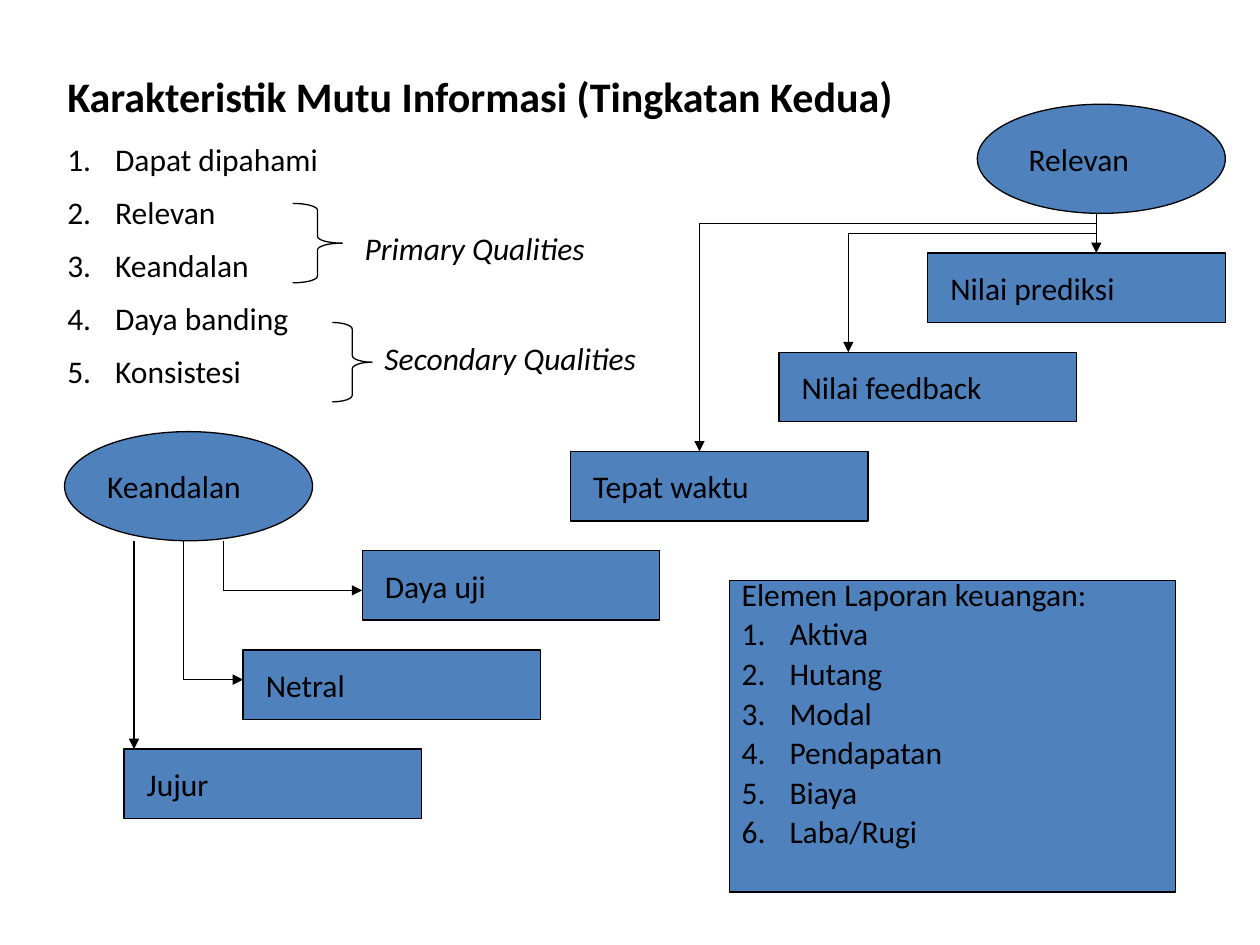
from lxml import etree
from pptx import Presentation
from pptx.dml.color import RGBColor
from pptx.enum.shapes import MSO_CONNECTOR, MSO_SHAPE
from pptx.enum.text import MSO_ANCHOR, MSO_AUTO_SIZE, PP_ALIGN
from pptx.oxml.ns import qn
from pptx.util import Inches, Pt

OVAL, RECT, BRACE = MSO_SHAPE.OVAL, MSO_SHAPE.RECTANGLE, MSO_SHAPE.RIGHT_BRACE
LINE = MSO_CONNECTOR.STRAIGHT
TOP, MIDDLE, LEFT = MSO_ANCHOR.TOP, MSO_ANCHOR.MIDDLE, PP_ALIGN.LEFT
NO_FIT = MSO_AUTO_SIZE.NONE

FONT = "Calibri"
COLORS = {"ink": "000000", "box": "4F81BD"}
CELL, EDGE = 1 / 12.7, 0.04  # grid of 2 mm cells, starting just inside the slide
HANG, GAP = 0.38, 8.6

# All places below are columns and rows of the grid.
TITLE = "Karakteristik Mutu Informasi (Tingkatan Kedua)"
TRAITS = ["Dapat dipahami", "Relevan", "Keandalan", "Daya banding", "Konsistesi"]
HEAD = "Elemen Laporan keuangan:"
PARTS = ["Aktiva", "Hutang", "Modal", "Pendapatan", "Biaya", "Laba/Rugi"]

BRACES = [((29, 20, 5, 8), 0.133), ((33, 32, 4, 8), 0.167)]
LABELS = [
    ("Primary Qualities", (35, 22, 34, 5)),
    ("Secondary Qualities", (37, 33, 37, 5)),
]
OVALS = [("Keandalan", 6, 43, 0.05), ("Relevan", 98, 10, 0.12)]
BOXES = [
    ("Daya uji", 36, 55), ("Netral", 24, 65), ("Jujur", 12, 75),
    ("Nilai prediksi", 93, 25), ("Nilai feedback", 78, 35), ("Tepat waktu", 57, 45),
]
# Each line: start, end, arrowhead at the end
LINES = [
    ((13, 54), (13, 75), True),
    ((18, 54), (18, 68), False), ((18, 68), (24, 68), True),
    ((22, 54), (22, 59), False), ((22, 59), (36, 59), True),
    ((110, 21), (110, 25), True),
    ((70, 22), (70, 45), True), ((70, 22), (110, 22), False),
    ((85, 23), (85, 35), True), ((85, 23), (110, 23), False),
]


def rgb(name):
    return RGBColor.from_string(COLORS[name])


def spot(n):
    return Inches(EDGE + n * CELL)


def area(col, row, wide, high):
    return spot(col), spot(row), Inches(wide * CELL), Inches(high * CELL)


def write(frame, lines, size=18, bold=False, italic=False, anchor=TOP):
    """Fill a text frame, one paragraph per line, and return the paragraphs."""
    frame.word_wrap = True
    frame.auto_size = NO_FIT
    frame.vertical_anchor = anchor
    paras = [frame.paragraphs[0]] + [frame.add_paragraph() for _ in lines[1:]]
    for i, (para, line) in enumerate(zip(paras, lines)):
        para.alignment = LEFT
        para.space_before = Pt(GAP if i else 0)
        run = para.add_run()
        run.text = line
        font = run.font
        font.name, font.size = FONT, Pt(size)
        font.bold, font.italic = bold, italic
        font.color.rgb = rgb("ink")
    return paras


def hang(paras, first=0):
    """Give a hanging indent, and numbers from the given paragraph on."""
    for i, para in enumerate(paras):
        props = para._p.get_or_add_pPr()
        props.set("marL", str(Inches(HANG)))
        props.set("indent", str(Inches(-HANG)))
        if i >= first:
            etree.SubElement(props, qn("a:buFont"), typeface="+mj-lt")
            etree.SubElement(props, qn("a:buAutoNum"), type="arabicPeriod")


def draw(slide, kind, place, filled=True):
    shape = slide.shapes.add_shape(kind, *area(*place))
    shape.shadow.inherit = False
    if filled:
        shape.fill.solid()
        shape.fill.fore_color.rgb = rgb("box")
    else:
        shape.fill.background()
    shape.line.color.rgb = rgb("ink")
    shape.line.width = Pt(0.75)
    return shape


def node(slide, kind, place, text, inset):
    frame = draw(slide, kind, place).text_frame
    frame.margin_left = Inches(inset)
    write(frame, [text], anchor=MIDDLE)


def link(slide, start, end, arrow):
    ends = [spot(n) for n in start + end]
    line = slide.shapes.add_connector(LINE, *ends)
    line.line.color.rgb = rgb("ink")
    line.line.width = Pt(0.75)
    if arrow:
        etree.SubElement(line.line._get_or_add_ln(), qn("a:tailEnd"), type="triangle")
    etree.SubElement(line._element.spPr, qn("a:effectLst"))


def put(holder, place):
    holder.left, holder.top, holder.width, holder.height = area(*place)
    return holder.text_frame


def main():
    deck = Presentation()
    deck.slide_width, deck.slide_height = Inches(10), Inches(7.5)
    slide = deck.slides.add_slide(deck.slide_layouts[1])

    write(put(slide.shapes.title, (5, 6, 117, 7)), [TITLE], size=24, bold=True)
    hang(write(put(slide.placeholders[1], (5, 13, 60, 29)), TRAITS))

    for place, curl in BRACES:
        draw(slide, BRACE, place, filled=False).adjustments[0] = curl
    for text, place in LABELS:
        label = slide.shapes.add_textbox(*area(*place))
        write(label.text_frame, [text], italic=True)

    for text, col, row, inset in OVALS:
        node(slide, OVAL, (col, row, 25, 11), text, inset)
    for text, col, row in BOXES:
        node(slide, RECT, (col, row, 30, 7), text, 0.18)

    report = draw(slide, RECT, (73, 58, 45, 31.4))
    paras = write(report.text_frame, [HEAD] + PARTS)
    for para in paras:
        para.line_spacing = 0.65
    hang(paras, first=1)

    for start, end, arrow in LINES:
        link(slide, start, end, arrow)
    deck.save("out.pptx")


if __name__ == "__main__":
    main()
